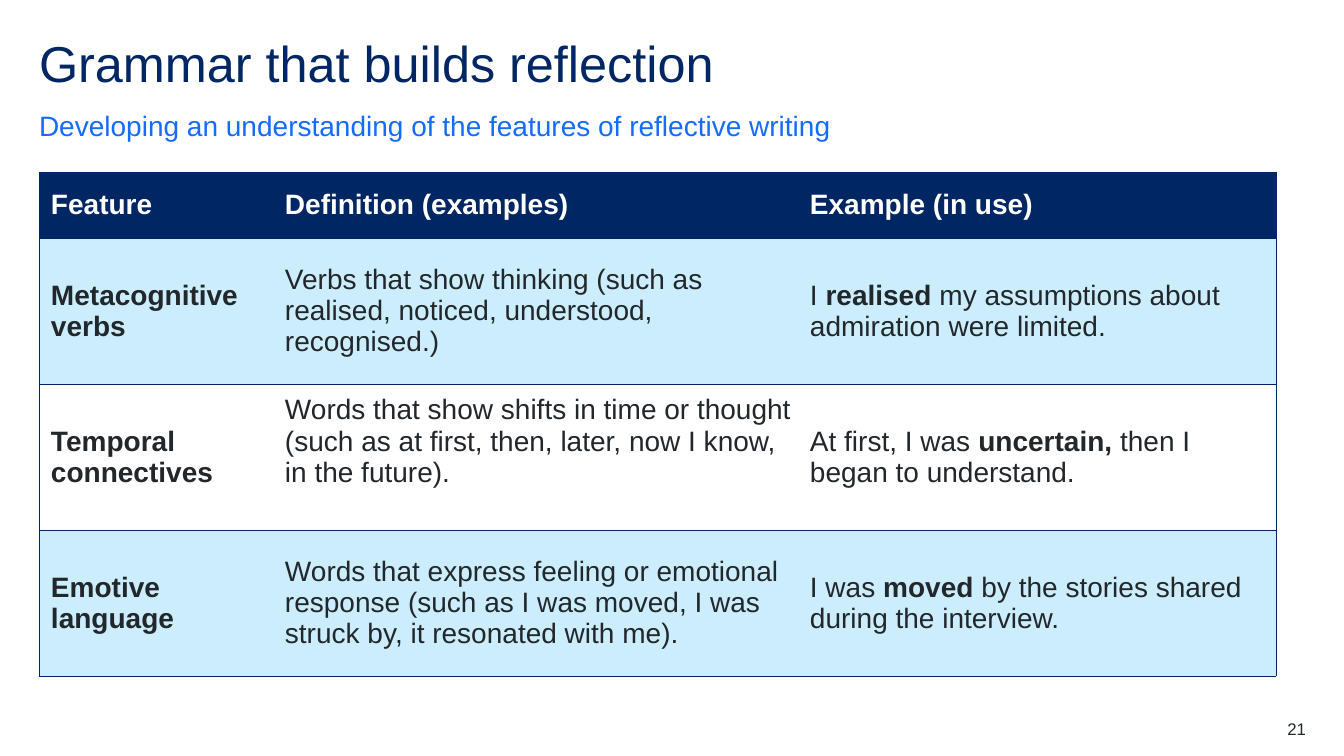
from lxml import etree
from pptx import Presentation
from pptx.dml.color import RGBColor
from pptx.enum.text import MSO_ANCHOR, PP_ALIGN
from pptx.oxml.ns import qn
from pptx.util import Emu, Pt

PX = 914400 / 100.8
FONT = "Arial"
TOP, MIDDLE, BOTTOM = MSO_ANCHOR.TOP, MSO_ANCHOR.MIDDLE, MSO_ANCHOR.BOTTOM
LEFT, RIGHT = PP_ALIGN.LEFT, PP_ALIGN.RIGHT
COLORS = {
    "navy": "002664",
    "blue": "146CFD",
    "pale": "CCEDFD",
    "white": "FFFFFF",
    "ink": "22272B",
}
COLUMN_WIDTHS = [234, 525, 478]
HEADER_HEIGHT = 66
BLANK_LINE = 31
HEADINGS = ["Feature", "Definition (examples)", "Example (in use)"]
FEATURES = [
    (
        "Metacognitive verbs",
        "Verbs that show thinking (such as realised, noticed, understood, recognised.)",
        ("I ", "realised", " my assumptions about admiration were limited."),
    ),
    (
        "Temporal connectives",
        "Words that show shifts in time or thought (such as at first, then, later, "
        "now I know, in the future).",
        ("At first, I was ", "uncertain,", " then I began to understand."),
    ),
    (
        "Emotive language",
        "Words that express feeling or emotional response (such as I was moved, "
        "I was struck by, it resonated with me).",
        ("I was ", "moved", " by the stories shared during the interview."),
    ),
]


def px(length):
    return Emu(round(length * PX))


def color(name):
    return RGBColor.from_string(COLORS[name])


def add_span(para, text, size, color_name, bold=False):
    span = para.add_run()
    span.text = text
    span.font.name = FONT
    span.font.size = Pt(size)
    span.font.bold = bold
    span.font.color.rgb = color(color_name)


def add_text(page, box, text, size, color_name, anchor=TOP, align=LEFT, spacing=1.0):
    frame = page.shapes.add_textbox(*map(px, box)).text_frame
    frame.word_wrap = True
    frame.vertical_anchor = anchor
    frame.margin_left = frame.margin_right = frame.margin_top = frame.margin_bottom = 0
    para = frame.paragraphs[0]
    para.alignment = align
    para.line_spacing = spacing
    add_span(para, text, size, color_name)


def set_borders(cell, visible):
    properties = cell._tc.get_or_add_tcPr()
    for index, side in enumerate("LRTB"):
        line = etree.Element(qn(f"a:ln{side}"), w=str(Pt(0.5)))
        if side in visible:
            fill = etree.SubElement(line, qn("a:solidFill"))
            etree.SubElement(fill, qn("a:srgbClr"), val=COLORS["navy"])
        else:
            etree.SubElement(line, qn("a:noFill"))
        properties.insert(index, line)


def fill_cell(cell, spans, text_color, fill_color, borders, bottom=0):
    cell.fill.solid()
    cell.fill.fore_color.rgb = color(fill_color)
    cell.vertical_anchor = MIDDLE
    cell.margin_left, cell.margin_right = px(12), px(4)
    cell.margin_top, cell.margin_bottom = 0, px(bottom)
    for text, bold in spans:
        add_span(cell.text_frame.paragraphs[0], text, 20, text_color, bold)
    set_borders(cell, borders)


def add_heading(page, box):
    left, top, width, _ = box
    add_text(page, (left, top, width, 60), "Grammar that builds reflection",
             36, "navy", spacing=0.9)
    add_text(page, (left, top + 69, width, 34),
             "Developing an understanding of the features of reflective writing",
             20, "blue", anchor=BOTTOM, spacing=1.5)


def add_feature_table(page, box):
    rows = [[[(heading, True)] for heading in HEADINGS]]
    for feature, definition, (before, key, after) in FEATURES:
        rows.append([
            [(feature, True)],
            [(definition, False)],
            [(before, False), (key, True), (after, False)],
        ])
    table = page.shapes.add_table(len(rows), len(HEADINGS), *map(px, box)).table
    table.horz_banding = False
    for column, width in zip(table.columns, COLUMN_WIDTHS):
        column.width = px(width)
    body_height = (box[3] - HEADER_HEIGHT) // len(FEATURES)
    edges = ["LTB", "TB", "RTB"]
    for row_index, cells in enumerate(rows):
        header = row_index == 0
        table.rows[row_index].height = px(HEADER_HEIGHT if header else body_height)
        text_color = "white" if header else "ink"
        fill_color = "navy" if header else ("white", "pale")[row_index % 2]
        for column_index, spans in enumerate(cells):
            raised = (row_index, column_index) == (2, 1)
            fill_cell(table.cell(row_index, column_index), spans, text_color,
                      fill_color, edges[column_index], BLANK_LINE if raised else 0)


def add_page_number(page, box):
    add_text(page, box, "21", 12, "ink", align=RIGHT)


def main():
    deck = Presentation()
    deck.slide_width, deck.slide_height = px(1344), px(756)
    page = deck.slides.add_slide(deck.slide_layouts[6])
    add_heading(page, (39, 39, 1266, 103))
    add_feature_table(page, (39, 172, sum(COLUMN_WIDTHS), 504))
    add_page_number(page, (1226, 719, 80, 20))
    deck.save("out.pptx")


if __name__ == "__main__":
    main()
